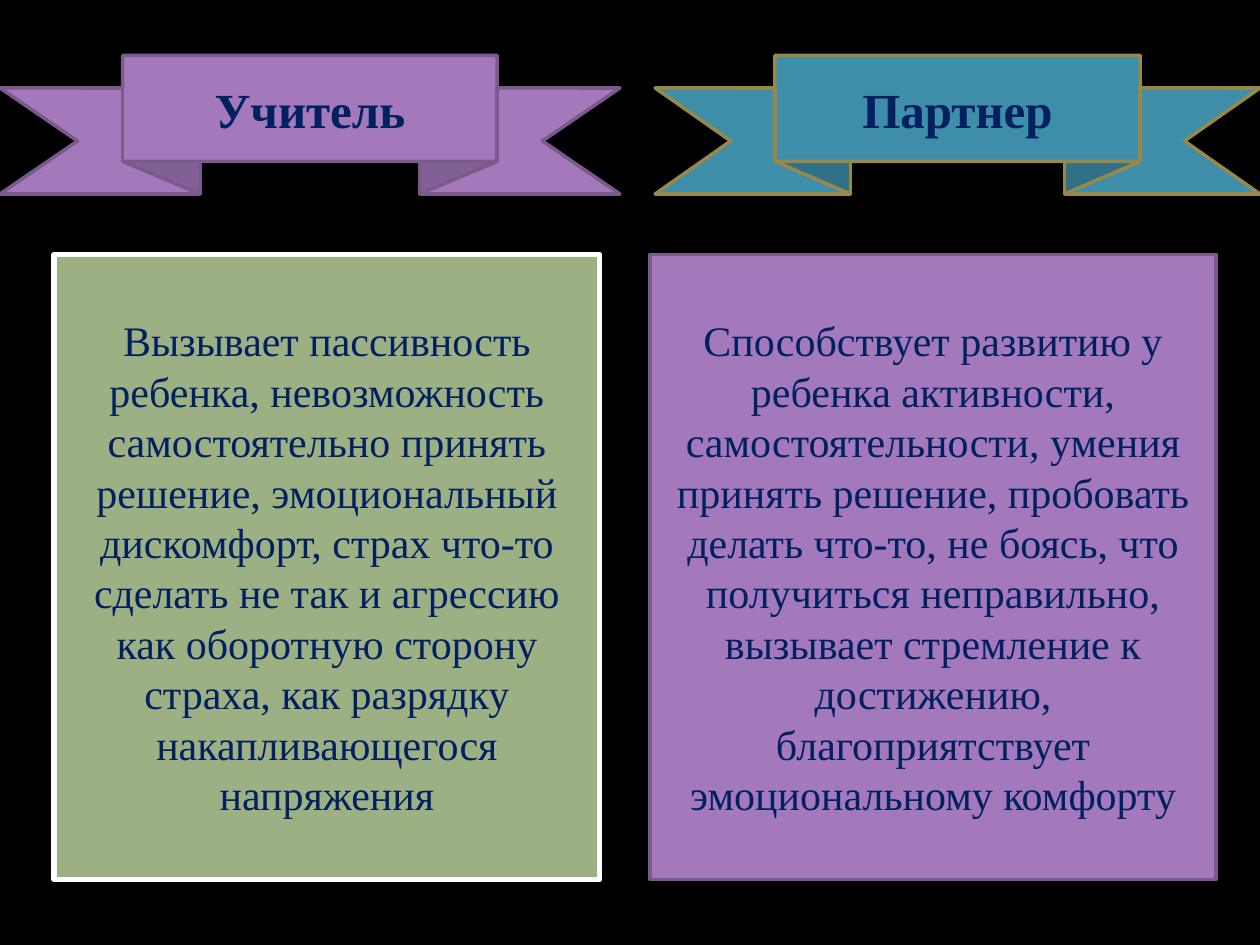
import pptx
from pptx.dml.color import RGBColor
from pptx.enum.shapes import MSO_SHAPE
from pptx.enum.text import MSO_ANCHOR, PP_ALIGN
from pptx.util import Inches, Pt

FONT, INK = "Times New Roman", "002060"
BANNER_TOP, BANNER_HEIGHT = 0.44, 1.1
CARD_TOP, CARD_HEIGHT = 2.02, 4.96

# text, left, width, fill, line colour, line width
CARDS = [
    ("Вызывает пассивность ребенка, невозможность самостоятельно принять "
     "решение, эмоциональный дискомфорт, страх что-то сделать не так и "
     "агрессию как оборотную сторону страха, как разрядку накапливающегося "
     "напряжения", 0.43, 4.33, "9CB084", "FFFFFF", 3),
    ("Способствует развитию у ребенка активности, самостоятельности, умения "
     "принять решение, пробовать делать что-то, не боясь, что получиться "
     "неправильно, вызывает стремление к достижению, благоприятствует "
     "эмоциональному комфорту", 5.16, 4.49, "A379BB", "795A8A", 2),
]
BANNERS = [
    ("Учитель", 0, 4.92, "A379BB", "795A8A", 2),
    ("Партнер", 5.2, 4.8, "3E8EA9", "98894B", 2),
]


def paint(fill, colour):
    fill.solid()
    fill.fore_color.rgb = RGBColor.from_string(colour)


def add_panel(s, kind, top, height, size, bold, item):
    """Add a filled, outlined shape with centred text."""
    text, left, width, fill, line, line_width = item
    sp = s.shapes.add_shape(kind, Inches(left), Inches(top),
                            Inches(width), Inches(height))
    sp.shadow.inherit = False
    paint(sp.fill, fill)
    paint(sp.line.fill, line)
    sp.line.width = Pt(line_width)
    tf = sp.text_frame
    tf.word_wrap = True
    tf.vertical_anchor = MSO_ANCHOR.MIDDLE
    p = tf.paragraphs[0]
    p.text = text
    p.alignment = PP_ALIGN.CENTER
    p.font.name, p.font.size, p.font.bold = FONT, Pt(size), bold
    p.font.color.rgb = RGBColor.from_string(INK)
    return sp


prs = pptx.Presentation()
prs.slide_width, prs.slide_height = Inches(10), Inches(7.5)
s = prs.slides.add_slide(prs.slide_layouts[6])
paint(s.background.fill, "000000")

for card in CARDS:
    add_panel(s, MSO_SHAPE.RECTANGLE, CARD_TOP, CARD_HEIGHT, 24, False, card)

for banner in BANNERS:
    ribbon = add_panel(s, MSO_SHAPE.CURVED_UP_RIBBON, BANNER_TOP,
                       BANNER_HEIGHT, 28, True, banner)
    for i, value in enumerate((0.235, 0.604, 0)):
        ribbon.adjustments[i] = value

prs.save("out.pptx")
